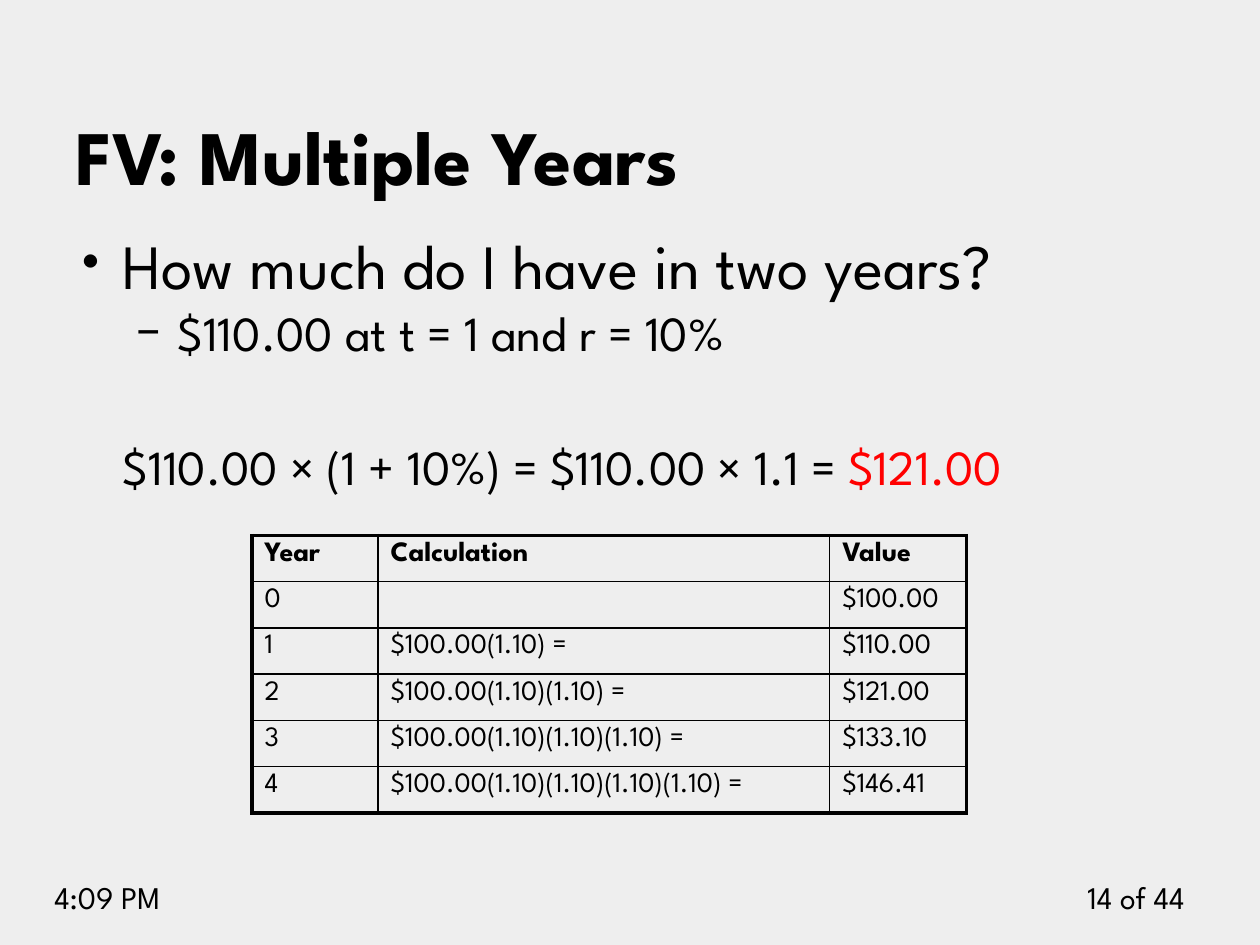
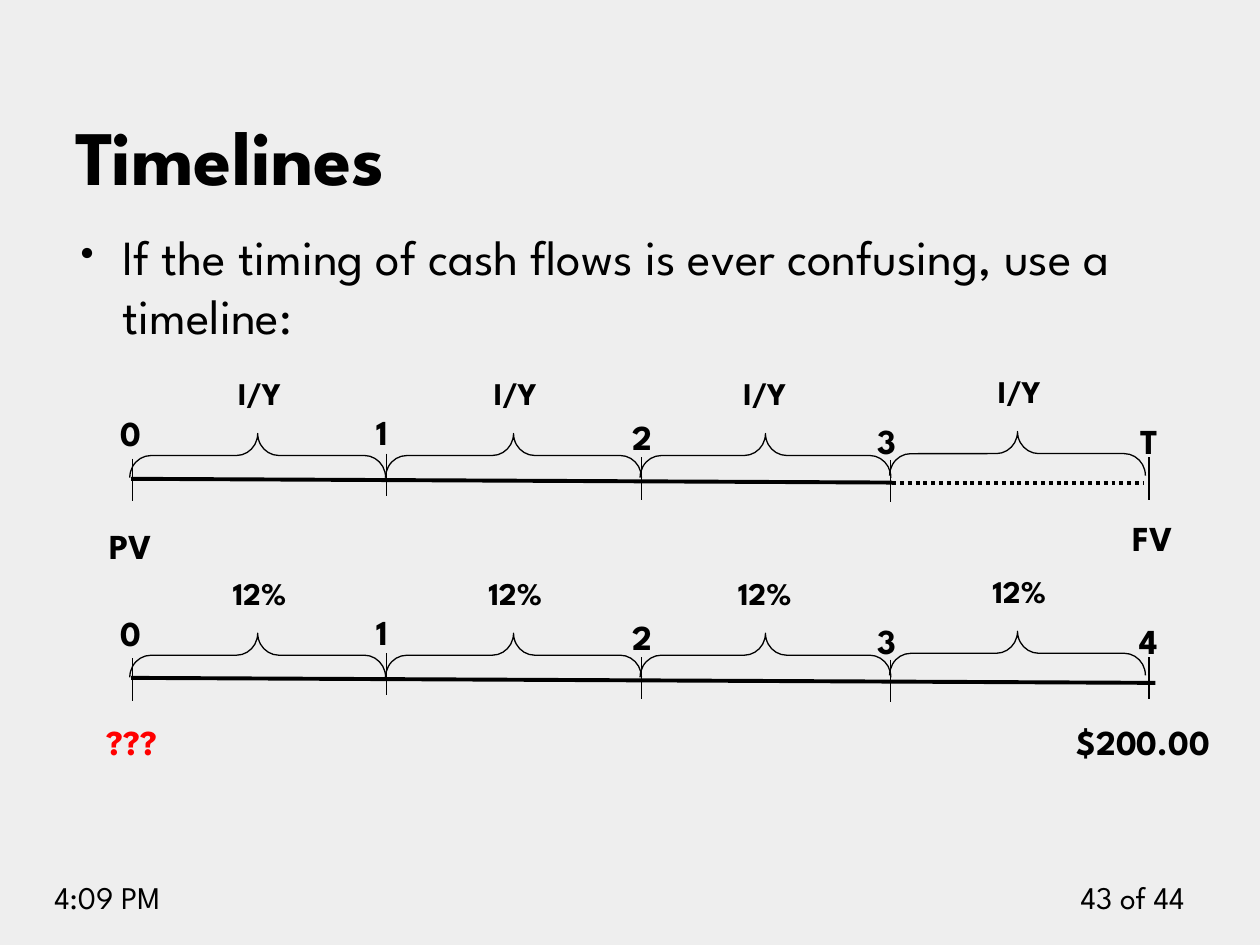
from lxml import etree
from pptx import Presentation
from pptx import util as u
from pptx.dml.color import RGBColor
from pptx.enum import dml, shapes, text
from pptx.oxml import ns

BLACK = RGBColor(0x00, 0x00, 0x00)
RED = RGBColor(0xFF, 0x00, 0x00)
GREY = RGBColor(0xEE, 0xEE, 0xEE)
FONT = "League Spartan"
COLS, ROWS = 100, 75
LEFT, CENTER, RIGHT = text.PP_ALIGN.LEFT, text.PP_ALIGN.CENTER, text.PP_ALIGN.RIGHT
TOP, BOTTOM = text.MSO_ANCHOR.TOP, text.MSO_ANCHOR.BOTTOM


class Deck:
    """Shared style plus the current slide; places are in grid columns and rows."""

    def __init__(self):
        self.prs = Presentation()
        self.prs.slide_width, self.prs.slide_height = u.Inches(10), u.Inches(7.5)
        self.slide = None

    def x(self, cols):
        return round(self.prs.slide_width * cols / COLS)

    def y(self, rows):
        return round(self.prs.slide_height * rows / ROWS)

    def box(self, left, top, width, height):
        return self.x(left), self.y(top), self.x(width), self.y(height)

    def new_slide(self, title, page):
        self.slide = self.prs.slides.add_slide(self.prs.slide_layouts[6])
        fill = self.slide.background.fill
        fill.solid()
        fill.fore_color.rgb = GREY
        self.text("4:09 PM", (3.33, 69.2, 15.8, 4), 18)
        self.text(f"{page} of 44", (83.3, 69.2, 11.7, 4), 18, align=RIGHT)
        self.text(title, (5, 3.9, 90, 12.5), 44, bold=True, anchor=BOTTOM)

    def style(self, p, size, bold=False, color=BLACK):
        for r in p.runs:
            r.font.name, r.font.size, r.font.bold = FONT, u.Pt(size), bold
            r.font.color.rgb = color

    def frame(self, place, anchor=TOP, wrap=True):
        tf = self.slide.shapes.add_textbox(*self.box(*place)).text_frame
        tf.word_wrap, tf.vertical_anchor = wrap, anchor
        return tf

    def text(self, words, place, size, bold=False, color=BLACK, align=LEFT,
             anchor=TOP, wrap=True):
        p = self.frame(place, anchor, wrap).paragraphs[0]
        p.text, p.alignment = words, align
        self.style(p, size, bold, color)

    def label(self, words, center, top, size=20, color=BLACK):
        width = 16
        self.text(words, (center - width / 2, top, width, 4.4), size, True, color,
                  CENTER, wrap=False)

    def body(self, items):
        """Each item: words, size, bullet, left margin, hanging indent."""
        tf = self.frame((5, 17.5, 90, 49.5))
        for i, (words, size, bullet, margin, hang) in enumerate(items):
            p = tf.paragraphs[0] if i == 0 else tf.add_paragraph()
            p.text = words
            pPr = p._p.get_or_add_pPr()
            pPr.set("marL", str(self.x(margin)))
            pPr.set("indent", str(-self.x(hang)))
            if bullet:
                etree.SubElement(pPr, ns.qn("a:buFont")).set("typeface", FONT)
                etree.SubElement(pPr, ns.qn("a:buChar")).set("char", bullet)
            self.style(p, size)
        return tf

    def line(self, x1, y1, x2, y2, width=0.75, dash=None):
        sp = self.slide.shapes.add_connector(
            shapes.MSO_CONNECTOR.STRAIGHT, self.x(x1), self.y(y1), self.x(x2), self.y(y2))
        sp.line.color.rgb, sp.line.width = BLACK, u.Pt(width)
        if dash:
            sp.line.dash_style = dash
        etree.SubElement(sp._element.spPr, ns.qn("a:effectLst"))

    def brace(self, left, top, span):
        """A brace lying over a span of columns, its point upwards."""
        depth = 3.5
        sp = self.slide.shapes.add_shape(
            shapes.MSO_SHAPE.LEFT_BRACE,
            *self.box(left + (span - depth) / 2, top + (depth - span) / 2, depth, span))
        sp.rotation = 90
        sp.adjustments[0] = 0.48
        sp.shadow.inherit = False
        sp.fill.background()
        sp.line.color.rgb, sp.line.width = BLACK, u.Pt(0.75)

    def border(self, cell, side, width):
        ln = etree.SubElement(cell._tc.get_or_add_tcPr(), ns.qn(f"a:ln{side}"))
        ln.set("w", str(u.Pt(width)))
        fill = etree.SubElement(ln, ns.qn("a:solidFill"))
        etree.SubElement(fill, ns.qn("a:srgbClr")).set("val", str(BLACK))

    def table(self, left, top, widths, row_height, rows, size=16):
        last_row, last_col = len(rows) - 1, len(widths) - 1
        table = self.slide.shapes.add_table(
            len(rows), len(widths),
            *self.box(left, top, sum(widths), row_height * len(rows))).table
        table.first_row = table.horz_banding = False
        for column, width in zip(table.columns, widths):
            column.width = self.x(width)
        for i, row in enumerate(rows):
            table.rows[i].height = self.y(row_height)
            for j, words in enumerate(row):
                cell = table.cell(i, j)
                p = cell.text_frame.paragraphs[0]
                if words:
                    p.text = words
                    self.style(p, size, bold=i == 0)
                else:
                    # An empty cell keeps the row height of the text size
                    end = etree.SubElement(p._p, ns.qn("a:endParaRPr"))
                    end.set("sz", str(size * 100))
                    etree.SubElement(end, ns.qn("a:latin")).set("typeface", FONT)
                outer = {"L": j == 0, "R": j == last_col, "T": i == 0, "B": i == last_row}
                for side, is_outer in outer.items():
                    self.border(cell, side, 2.25 if is_outer else 1)
                cell.fill.background()

    def timeline(self, top, periods, rate):
        """Ticks with period labels, and a braced rate over every gap."""
        ticks = (10.5, 30.7, 50.9, 70.7, 91.2)
        tick_tops = (7.4, 7, 7.3, 7.5, 7.3)
        label_centers = (10.4, 30.3, 51, 70.4, 91.2)
        label_tops = (3.2, 3.1, 3.5, 3.8, 3.8)
        for x, dy, center, label_dy, period in zip(
                ticks, tick_tops, label_centers, label_tops, periods):
            self.line(x, top + dy, x, top + dy + 3.35)
            self.label(period, center, top + label_dy)
        braces = ((10.3, 20.3), (30.6, 20.3), (50.8, 19.9), (70.6, 20.3))
        rate_centers = (20.6, 40.9, 60.7, 80.9)
        for i, ((left, span), center) in enumerate(zip(braces, rate_centers)):
            lift = 0.15 if i == len(braces) - 1 else 0
            self.brace(left, top + 5.4 - lift, span)
            self.label(rate, center, top + 0.2 - lift, size=18)


def future_value(deck):
    deck.new_slide("FV: Multiple Years", 14)
    tf = deck.body([
        ("How much do I have in two years?", 36, "•", 3.75, 3.75),
        ("$110.00 at t = 1 and r = 10%", 28, "–", 8.1, 3.1),
        ("$110.00 × (1 + 10%) = $110.00 × 1.1 = ", 28, None, 3.75, 0),
    ])
    # Result in red, one large line below the bullets
    p = tf.paragraphs[-1]
    p.space_before = u.Pt(43)
    r = p.add_run()
    r.text = "$121.00"
    deck.style(p, 28)
    r.font.color.rgb = RED

    # Growth table
    values = ("$100.00", "$110.00", "$121.00", "$133.10", "$146.41")
    rows = [("Year", "Calculation", "Value")]
    for year, value in enumerate(values):
        calculation = f"$100.00{'(1.10)' * year} =" if year else ""
        rows.append((str(year), calculation, value))
    deck.table(20, 42.5, (10, 35.85, 10.85), 3.04, rows)


def timelines(deck):
    deck.new_slide("Timelines", 43)
    deck.body([("If the timing of cash flows is ever confusing, use a timeline:",
                28, "•", 3.75, 3.75)])

    # General timeline, dotted up to the last period
    deck.timeline(29, "0123T", "I/Y")
    deck.line(10.4, 38, 70.8, 38.3, 2.25)
    deck.line(70.8, 38.3, 90.8, 38.3, 2.25, dml.MSO_LINE.ROUND_DOT)
    deck.label("PV", 10.4, 41.1)
    deck.label("FV", 91.5, 40.5)

    # Worked example
    deck.timeline(44.85, "01234", "12%")
    deck.line(10.4, 53.8, 91.7, 54.2, 2.25)
    deck.label("???", 10.45, 56.7, color=RED)
    deck.label("$200.00", 90.75, 56.7)


def main():
    deck = Deck()
    future_value(deck)
    timelines(deck)
    deck.prs.save("out.pptx")


if __name__ == "__main__":
    main()
